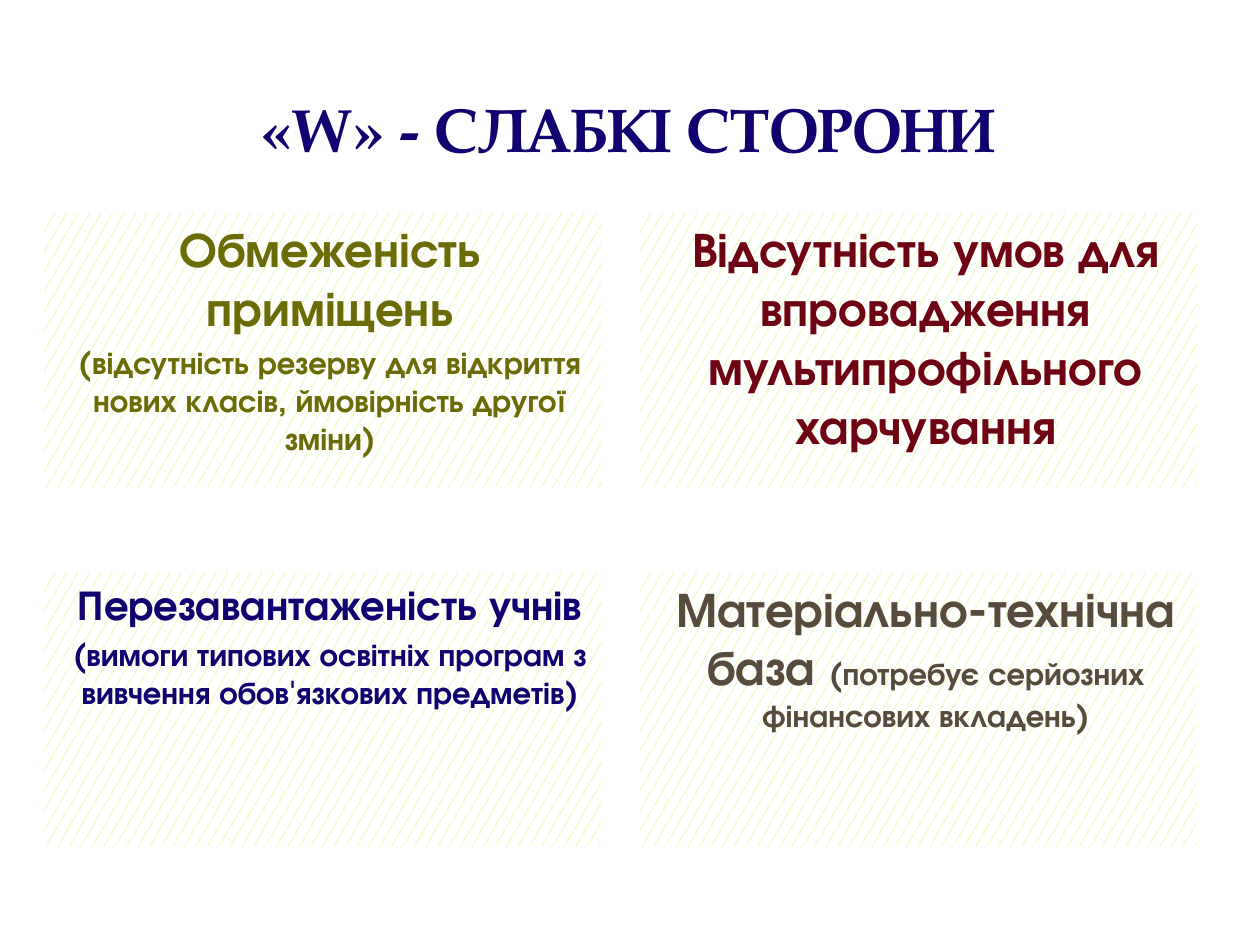
from pptx import Presentation
from pptx.dml.color import RGBColor
from pptx.enum.dml import MSO_PATTERN
from pptx.enum.shapes import MSO_SHAPE
from pptx.enum.text import MSO_ANCHOR, PP_ALIGN
from pptx.util import Cm, Pt


def rgb(value):
    return RGBColor.from_string(value)


def add_run(p, text, font, size, color):
    r = p.add_run()
    r.text = text
    r.font.name = font
    r.font.size = Pt(size)
    r.font.bold = True
    r.font.color.rgb = rgb(color)


prs = Presentation()
prs.slide_width, prs.slide_height = Cm(25.4), Cm(19.05)
s = prs.slides.add_slide(prs.slide_layouts[5])

title = s.shapes.title
title.left, title.top, title.width, title.height = Cm(1.19), Cm(1.14), Cm(22.94), Cm(2.9)
tf = title.text_frame
tf.vertical_anchor = MSO_ANCHOR.MIDDLE
p = tf.paragraphs[0]
p.alignment = PP_ALIGN.CENTER
add_run(p, "«W» - СЛАБКІ СТОРОНИ", "TeX Gyre Pagella", 35, "10036F")

# Row by row: text colour, then paragraphs made of (text, size) runs
weaknesses = [
    ("6B6B07", [
        [("Обмеженість приміщень", 28)],
        [("(відсутність резерву для відкриття нових класів, ймовірність другої зміни)", 18)],
    ]),
    ("6E0413", [
        [("Відсутність умов для впровадження мультипрофільного харчування", 28)],
    ]),
    ("10036F", [
        [("Перезавантаженість учнів", 24)],
        [("(вимоги типових освітніх програм з вивчення обов'язкових предметів)", 18)],
    ]),
    ("564B3C", [
        [("Матеріально-технічна база ", 28), ("(потребує серйозних фінансових вкладень)", 18)],
    ]),
]

for i, (color, paragraphs) in enumerate(weaknesses):
    row, col = divmod(i, 2)
    sp = s.shapes.add_shape(MSO_SHAPE.RECTANGLE, Cm(0.89 + 12.01 * col),
                            Cm(4.29 + 7.24 * row), Cm(11.23), Cm(5.54))
    sp.shadow.inherit = False
    sp.line.fill.background()
    sp.fill.patterned()
    sp.fill.pattern = MSO_PATTERN.SMALL_CONFETTI
    sp.fill.fore_color.rgb = rgb("CAF430")
    sp.fill.back_color.rgb = rgb("FFFFFF")

    tf = sp.text_frame
    tf.word_wrap = True
    tf.vertical_anchor = MSO_ANCHOR.TOP
    for n, runs in enumerate(paragraphs):
        p = tf.add_paragraph() if n else tf.paragraphs[0]
        p.alignment = PP_ALIGN.CENTER
        p.space_before = Pt(0.2 * runs[0][1])
        p._p.get_or_add_pPr().set("marL", str(Cm(0.3)))
        for text, size in runs:
            add_run(p, text, "TeX Gyre Adventor", size, color)

prs.save("out.pptx")
